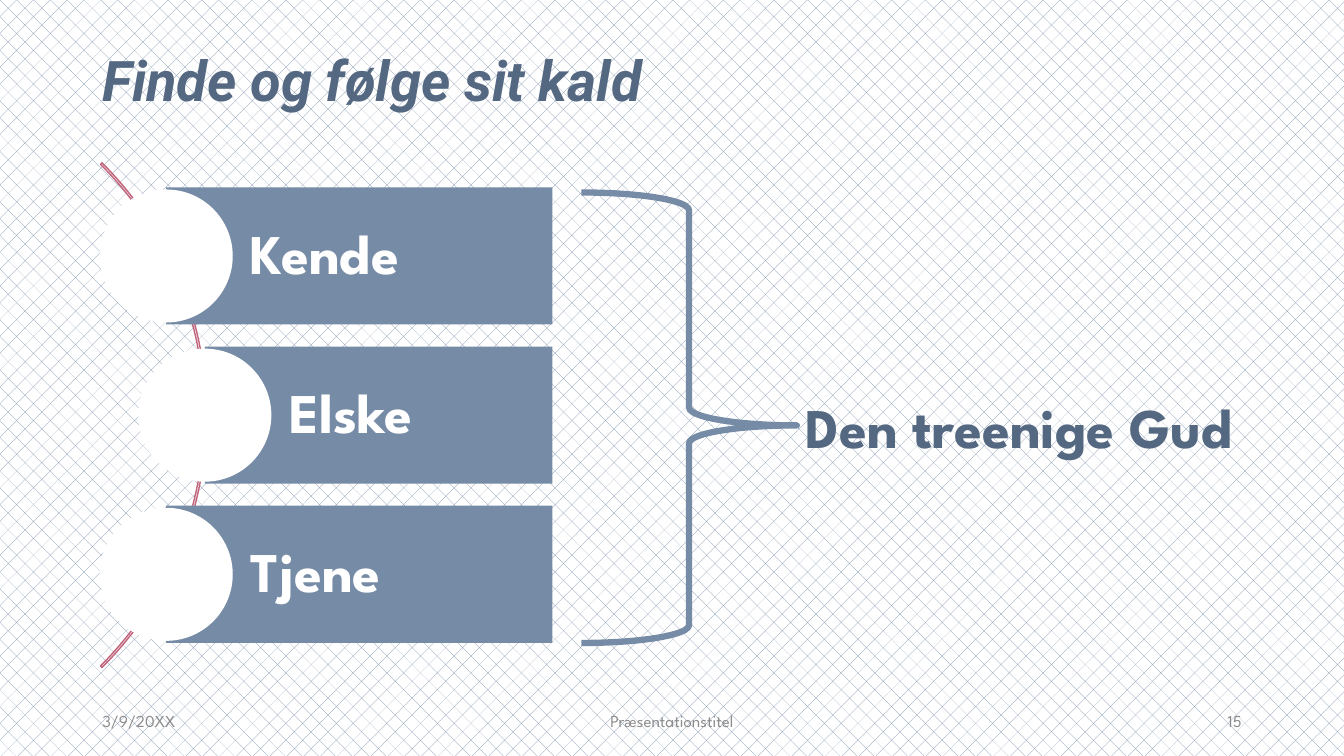
import pptx
import pptx.dml.color
import pptx.enum.dml
import pptx.enum.shapes
import pptx.enum.text
import pptx.util

Pt = pptx.util.Pt
SHAPE = pptx.enum.shapes.MSO_SHAPE
ALIGN = pptx.enum.text.PP_ALIGN
ANCHOR = pptx.enum.text.MSO_ANCHOR
BLUE, DARK_BLUE, ROSE, GREY, WHITE = "768BA6", "546881", "C0637A", "8C8C8C", "FFFFFF"
HEADING_FONT, BODY_FONT = "Roboto", "League Spartan"


def color(hex_string):
    """Return the RGB colour for a hex string."""
    return pptx.dml.color.RGBColor.from_string(hex_string)


def write_text(shape, text, size, hex_string, font=BODY_FONT, bold=False, italic=False,
               align=ALIGN.LEFT, anchor=ANCHOR.MIDDLE, spacing=1.0):
    """Write one styled line of text into a shape."""
    frame = shape.text_frame
    frame.word_wrap = True
    frame.vertical_anchor = anchor
    paragraph = frame.paragraphs[0]
    paragraph.alignment = align
    paragraph.line_spacing = spacing
    run = paragraph.add_run()
    run.text = text
    run.font.name = font
    run.font.size = Pt(size)
    run.font.bold = bold
    run.font.italic = italic
    run.font.color.rgb = color(hex_string)


def add_text(slide, box, text, size, hex_string, **style):
    """Add a text box at the given left, top, width and height."""
    shape = slide.shapes.add_textbox(*map(Pt, box))
    write_text(shape, text, size, hex_string, **style)


def add_shape(slide, kind, box, fill=None, line=None, line_width=1, adjustments=()):
    """Add a flat preset shape with an optional fill and outline."""
    shape = slide.shapes.add_shape(kind, *map(Pt, box))
    shape.shadow.inherit = False
    for index, value in enumerate(adjustments):
        shape.adjustments[index] = value
    if fill:
        shape.fill.solid()
        shape.fill.fore_color.rgb = color(fill)
    else:
        shape.fill.background()
    if line:
        shape.line.color.rgb = color(line)
        shape.line.width = Pt(line_width)
    else:
        shape.line.fill.background()
    return shape


def set_background(slide):
    """Fill the slide background with a dotted diamond pattern."""
    fill = slide.background.fill
    fill.patterned()
    fill.pattern = pptx.enum.dml.MSO_PATTERN.DOTTED_DIAMOND
    fill.fore_color.rgb = color(BLUE)
    fill.back_color.rgb = color(WHITE)


def add_curved_list(slide, box, words):
    """Add bars with round markers along an arc, spread evenly over the box."""
    left, top, width, height = box
    bar_height, diameter, bulge, arc_size = 97.92, 95.04, 27.6, 509.76
    pitch = (height - bar_height) / (len(words) - 1)
    arc_box = (left - 433.4, top + (height - arc_size) / 2, arc_size, arc_size)
    add_shape(slide, SHAPE.BLOCK_ARC, arc_box, line=ROSE, adjustments=(189, 27, 0.003))
    for index, word in enumerate(words):
        bar_left = left + diameter / 2 + bulge * (index % 2)
        bar_top = top + index * pitch
        bar_box = (bar_left, bar_top, left + width - bar_left, bar_height)
        bar = add_shape(slide, SHAPE.RECTANGLE, bar_box, fill=BLUE)
        bar.text_frame.margin_left = Pt(60.5)
        write_text(bar, word, 40, WHITE, bold=True, spacing=0.9)
        marker_box = (bar_left - diameter / 2, bar_top + (bar_height - diameter) / 2,
                      diameter, diameter)
        add_shape(slide, SHAPE.OVAL, marker_box, fill=WHITE)


def add_conclusion(slide, box, text):
    """Add a brace and, at its point, the words it leads to."""
    left, top, width, height = box
    brace_width = 154
    add_shape(slide, SHAPE.RIGHT_BRACE, (left, top, brace_width, height),
              line=BLUE, line_width=4.5, adjustments=(0.083, 0.517))
    text_box = (left + brace_width - 0.6, top + 139, width - brace_width, 55.4)
    add_text(slide, text_box, text, 40, DARK_BLUE, bold=True, anchor=ANCHOR.TOP)


def add_footer(slide, box, date, title, number):
    """Add the date, presentation title and slide number along the box."""
    left, top, width, height = box
    parts = ((date, left, 216, ALIGN.LEFT),
             (title, left + (width - 324) / 2, 324, ALIGN.CENTER),
             (number, left + width - 216, 216, ALIGN.RIGHT))
    for text, part_left, part_width, align in parts:
        add_text(slide, (part_left, top, part_width, height), text, 12, GREY, align=align)


def main():
    """Build the slide and save it."""
    presentation = pptx.Presentation()
    presentation.slide_width, presentation.slide_height = Pt(960), Pt(540)
    slide = presentation.slides.add_slide(presentation.slide_layouts[6])
    set_background(slide)
    add_text(slide, (66, 28.75, 828, 62), "Finde og følge sit kald", 40, DARK_BLUE,
             font=HEADING_FONT, bold=True, italic=True, spacing=0.9)
    add_curved_list(slide, (71.2, 133.9, 323.4, 325.3), ("Kende", "Elske", "Tjene"))
    add_footer(slide, (66, 500.5, 828, 28.75), "3/9/20XX", "Præsentationstitel", "15")
    add_conclusion(slide, (415.2, 137.5, 532, 321.8), "Den treenige Gud")
    presentation.save("out.pptx")


if __name__ == "__main__":
    main()
